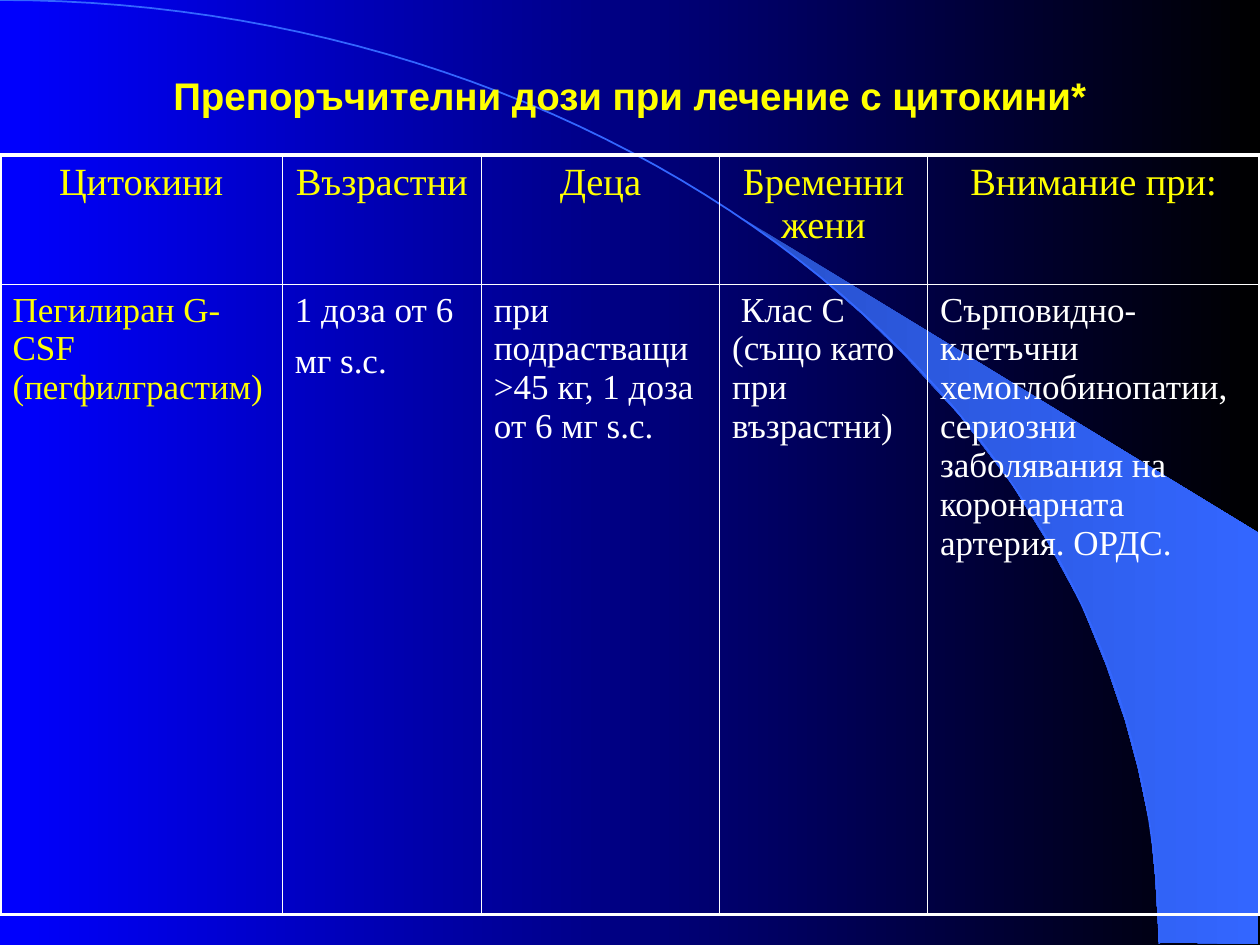
import math
from dataclasses import dataclass

from lxml import etree
from pptx import Presentation
from pptx.dml.color import RGBColor
from pptx.enum import text
from pptx.oxml import ns
from pptx.util import Pt


@dataclass(frozen=True)
class Theme:
    blue: str = "0000FF"
    black: str = "000000"
    crescent_dark: str = "2851CC"
    accent: str = "3366FF"
    yellow: str = "FFFF00"
    white: str = "FFFFFF"
    title_font: str = "Arial"
    table_font: str = "Times New Roman"
    heading: float = 22
    body: float = 20
    trailing: float = 28
    outer_line: float = 2.25
    inner_line: float = 1


THEME = Theme()
TITLE = "Препоръчителни дози при лечение с цитокини*"
HEADERS = ["Цитокини", "Възрастни", "Деца", "Бременни жени", "Внимание при:"]
DOSES = [
    "Пегилиран G-CSF (пегфилграстим)",
    "1 доза от 6 мг s.c.",
    "при подрастващи >45 кг, 1 доза от 6 мг s.с.",
    " Клас С (също като при възрастни)",
    "Сърповидно-клетъчни хемоглобинопатии, сериозни заболявания "
    "на коронарната артерия. ОРДС.",
]
COLUMN_WIDTHS = [161.3, 113.8, 136.1, 118.8, 190]
ROW_HEIGHTS = [74, 360]
ARC_WIDTH, ARC_HEIGHT, ARC_STEPS = 662.4, 539.3, 60
CRESCENT = [
    (662.4, 538.6), (719.3, 539.3), (719.3, 304.6), (424.1, 124.6),
    (449.3, 143.3), (470.2, 159.8), (493.2, 180), (515.5, 201.6),
    (548.6, 237.6), (578.2, 276.5), (599, 310.3), (617.8, 344.9),
    (632.2, 380.2), (643, 411.8), (650.2, 438.5), (657.4, 472.3),
    (660.2, 501.1),
]


def rgb(color):
    return RGBColor.from_string(color)


def apply_gradient(fill, start, end):
    """Fill from left to right."""
    fill.gradient()
    fill.gradient_angle = 0
    for stop, color, position in zip(fill.gradient_stops, (start, end), (0, 1)):
        stop.color.rgb = rgb(color)
        stop.position = position


def add_outline(s, points, close):
    corners = [(Pt(x), Pt(y)) for x, y in points]
    builder = s.shapes.build_freeform(*corners[0])
    builder.add_line_segments(corners[1:], close=close)
    sp = builder.convert_to_shape()
    sp.shadow.inherit = False
    return sp


def add_crescent(s):
    sp = add_outline(s, CRESCENT, True)
    apply_gradient(sp.fill, THEME.crescent_dark, THEME.accent)
    sp.line.fill.background()


def add_arc(s):
    """Draw a quarter ellipse from the top left corner to the bottom."""
    angles = [math.pi / 2 * i / ARC_STEPS for i in range(ARC_STEPS + 1)]
    points = [(ARC_WIDTH * math.sin(a), ARC_HEIGHT * (1 - math.cos(a))) for a in angles]
    sp = add_outline(s, points, False)
    sp.fill.background()
    sp.line.color.rgb = rgb(THEME.accent)
    sp.line.width = Pt(1)


def add_run(p, words, font, size, color, bold=False):
    r = p.add_run()
    r.text = words
    r.font.name = font
    r.font.size = Pt(size)
    r.font.bold = bold
    r.font.color.rgb = rgb(color)


def format_title(s):
    title = s.shapes.title
    title.left, title.top, title.width, title.height = Pt(54), Pt(15), Pt(612), Pt(79.2)
    tf = title.text_frame
    tf.word_wrap = True
    tf.vertical_anchor = text.MSO_ANCHOR.MIDDLE
    p = tf.paragraphs[0]
    p.alignment = text.PP_ALIGN.CENTER
    add_run(p, TITLE, THEME.title_font, THEME.heading, THEME.yellow, True)
    title.element.getparent().append(title.element)  # in front of the curves


def set_borders(cell, outer_sides):
    tc_pr = cell._tc.get_or_add_tcPr()
    for side in "LRTB":
        width = THEME.outer_line if side in outer_sides else THEME.inner_line
        ln = etree.SubElement(tc_pr, ns.qn(f"a:ln{side}"), w=str(Pt(width)))
        fill = etree.SubElement(ln, ns.qn("a:solidFill"))
        etree.SubElement(fill, ns.qn("a:srgbClr"), val=THEME.white)


def fill_cell(cell, words, row, col):
    is_header = row == 0
    outer = "T" if is_header else "B"
    outer += {0: "L", len(HEADERS) - 1: "R"}.get(col, "")
    set_borders(cell, outer)
    cell.fill.background()
    p = cell.text_frame.paragraphs[0]
    p.alignment = text.PP_ALIGN.CENTER if is_header else text.PP_ALIGN.LEFT
    size = THEME.heading if is_header else THEME.body
    color = THEME.yellow if is_header or col == 0 else THEME.white
    add_run(p, words, THEME.table_font, size, color)
    if (row, col) == (1, 1):
        add_run(p, " ", THEME.table_font, THEME.trailing, color)


def add_dose_table(s):
    rows = [HEADERS, DOSES]
    table = s.shapes.add_table(
        len(rows), len(HEADERS), Pt(0), Pt(88.6),
        Pt(sum(COLUMN_WIDTHS)), Pt(sum(ROW_HEIGHTS)),
    ).table
    table.first_row = table.horz_banding = False
    for column, width in zip(table.columns, COLUMN_WIDTHS):
        column.width = Pt(width)
    for i, (row, height) in enumerate(zip(rows, ROW_HEIGHTS)):
        table.rows[i].height = Pt(height)
        for j, words in enumerate(row):
            fill_cell(table.cell(i, j), words, i, j)


def main():
    prs = Presentation()
    prs.slide_width, prs.slide_height = Pt(720), Pt(540)
    s = prs.slides.add_slide(prs.slide_layouts.get_by_name("Title Only"))
    apply_gradient(s.background.fill, THEME.blue, THEME.black)
    add_crescent(s)
    add_arc(s)
    format_title(s)
    add_dose_table(s)
    prs.save("out.pptx")


if __name__ == "__main__":
    main()
